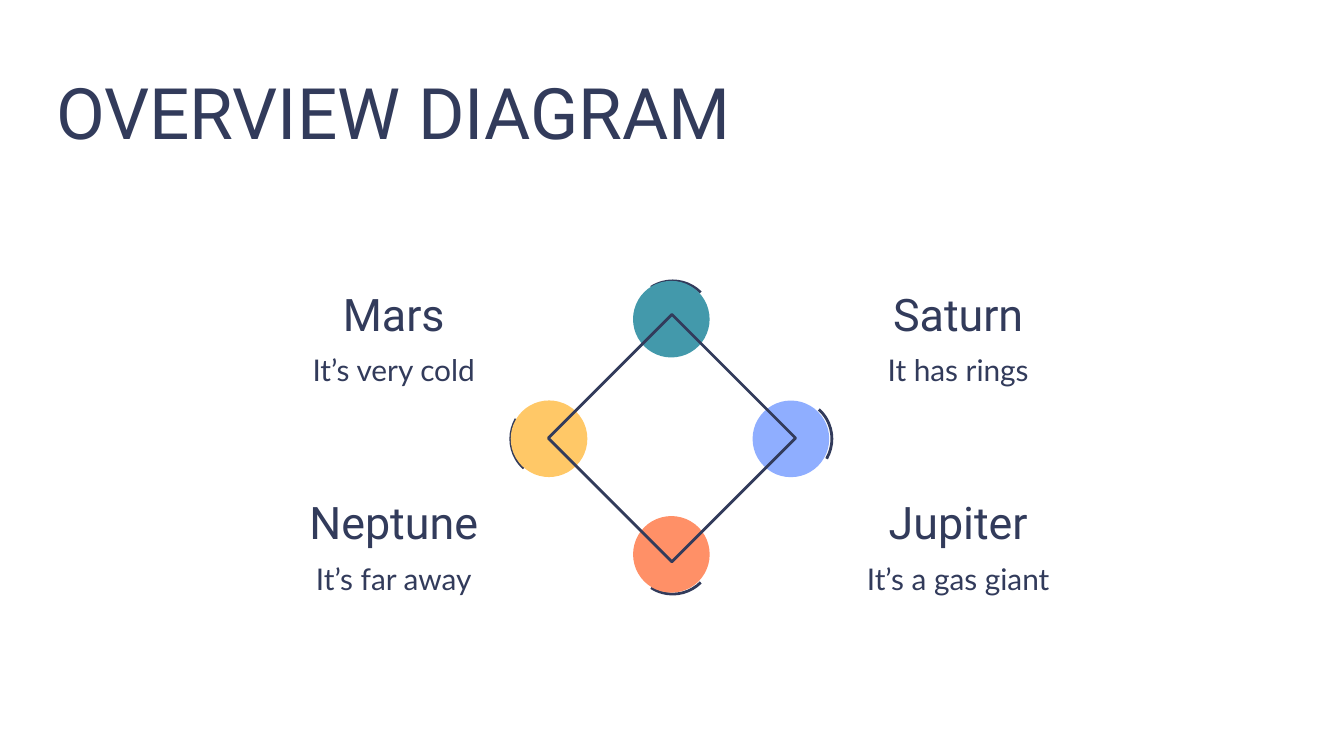
from typing import NamedTuple

from pptx import Presentation
from pptx.dml.color import RGBColor
from pptx.enum.shapes import MSO_SHAPE as Shape
from pptx.enum.text import MSO_ANCHOR as Anchor, PP_ALIGN as Align
from pptx.util import Inches, Pt

COLORS = {
    "white": "FFFFFF",
    "navy": "323B5B",
    "teal": "4399AB",
    "blue": "8FAEFF",
    "orange": "FF9067",
    "yellow": "FFC867",
}
SLIDE_WIDTH = 10
SLIDE_HEIGHT = SLIDE_WIDTH * 9 / 16
ARC_SIZE = 0.59
DOT_SIZE = 0.57
ARC_ADJUSTMENTS = (162, 208.745)  # 270 to 348 degrees
LABEL_WIDTH, LABEL_HEIGHT = 1.76, 0.47
CAPTION_OFFSET = 0.45


class Node(NamedTuple):
    color: str
    left: float
    arc_top: float
    dot_top: float
    rotation: int
    flipped: bool = True


class Planet(NamedTuple):
    name: str
    caption: str
    left: float
    top: float


NODES = [
    Node("teal", 4.71, 2.09, 2.09, 45),
    Node("blue", 5.6, 2.97, 2.98, 120),
    Node("orange", 4.71, 3.83, 3.84, 135, flipped=False),
    Node("yellow", 3.8, 2.97, 2.98, 300),
]
LEFT_COLUMN, RIGHT_COLUMN = 2.05, 6.25
UPPER_ROW, LOWER_ROW = 2.03, 3.58
PLANETS = [
    Planet("Mars", "It’s very cold", LEFT_COLUMN, UPPER_ROW),
    Planet("Saturn", "It has rings", RIGHT_COLUMN, UPPER_ROW),
    Planet("Neptune", "It’s far away", LEFT_COLUMN, LOWER_ROW),
    Planet("Jupiter", "It’s a gas giant", RIGHT_COLUMN, LOWER_ROW),
]


def rgb(name: str) -> RGBColor:
    return RGBColor.from_string(COLORS[name])


def add_shape(shapes, kind, left: float, top: float, size: float, fill: str = ""):
    """Add a square-framed shape: filled without a line, or outlined in navy."""
    sp = shapes.add_shape(kind, Inches(left), Inches(top), Inches(size), Inches(size))
    sp.shadow.inherit = False
    if fill:
        sp.fill.solid()
        sp.fill.fore_color.rgb = rgb(fill)
        sp.line.fill.background()
    else:
        sp.fill.background()
        sp.line.color.rgb = rgb("navy")
        sp.line.width = Pt(1.5)
    return sp


def add_node(shapes, node: Node) -> None:
    arc = add_shape(shapes, Shape.ARC, node.left, node.arc_top, ARC_SIZE)
    for i, value in enumerate(ARC_ADJUSTMENTS):
        arc.adjustments[i] = value
    dot = add_shape(shapes, Shape.OVAL, node.left, node.dot_top, DOT_SIZE, node.color)
    for sp in (arc, dot):
        sp.rotation = node.rotation
        if node.flipped:
            sp._element.spPr.xfrm.set("flipH", "1")


def set_text(sp, text: str, font: str, size: int):
    """Write one centred, top-anchored paragraph and return it."""
    tf = sp.text_frame
    tf.word_wrap = True
    tf.vertical_anchor = Anchor.TOP
    tf.margin_left = tf.margin_right = tf.margin_top = tf.margin_bottom = Inches(0.1)
    p = tf.paragraphs[0]
    p.text = text
    p.alignment = Align.CENTER
    p.font.name = font
    p.font.size = Pt(size)
    p.font.color.rgb = rgb("navy")
    return p


def add_label(shapes, left: float, top: float, text: str, font: str, size: int):
    sp = shapes.add_textbox(
        Inches(left), Inches(top), Inches(LABEL_WIDTH), Inches(LABEL_HEIGHT)
    )
    return set_text(sp, text, font, size)


def add_planet(shapes, planet: Planet) -> None:
    add_label(shapes, planet.left, planet.top, planet.name, "Roboto", 24)
    p = add_label(
        shapes, planet.left, planet.top + CAPTION_OFFSET, planet.caption, "Lato", 16
    )
    p.line_spacing = 1.15
    p.space_after = Pt(16)


def main() -> None:
    prs = Presentation()
    prs.slide_width, prs.slide_height = Inches(SLIDE_WIDTH), Inches(SLIDE_HEIGHT)
    s = prs.slides.add_slide(prs.slide_layouts[5])

    # Background
    s.background.fill.solid()
    s.background.fill.fore_color.rgb = rgb("white")

    # Title
    title = s.shapes.title
    title.left, title.top = Inches(-1.29), Inches(0.41)
    title.width, title.height = Inches(8.44), Inches(0.77)
    p = set_text(title, "OVERVIEW DIAGRAM", "Roboto", 38)
    p.space_before = Pt(0)

    # Coloured dots with their arcs, and the planet labels
    for node in NODES:
        add_node(s.shapes, node)
    for planet in PLANETS:
        add_planet(s.shapes, planet)

    # Diamond linking the dots
    add_shape(s.shapes, Shape.DIAMOND, 4.08, 2.34, 1.84)

    prs.save("out.pptx")


if __name__ == "__main__":
    main()
